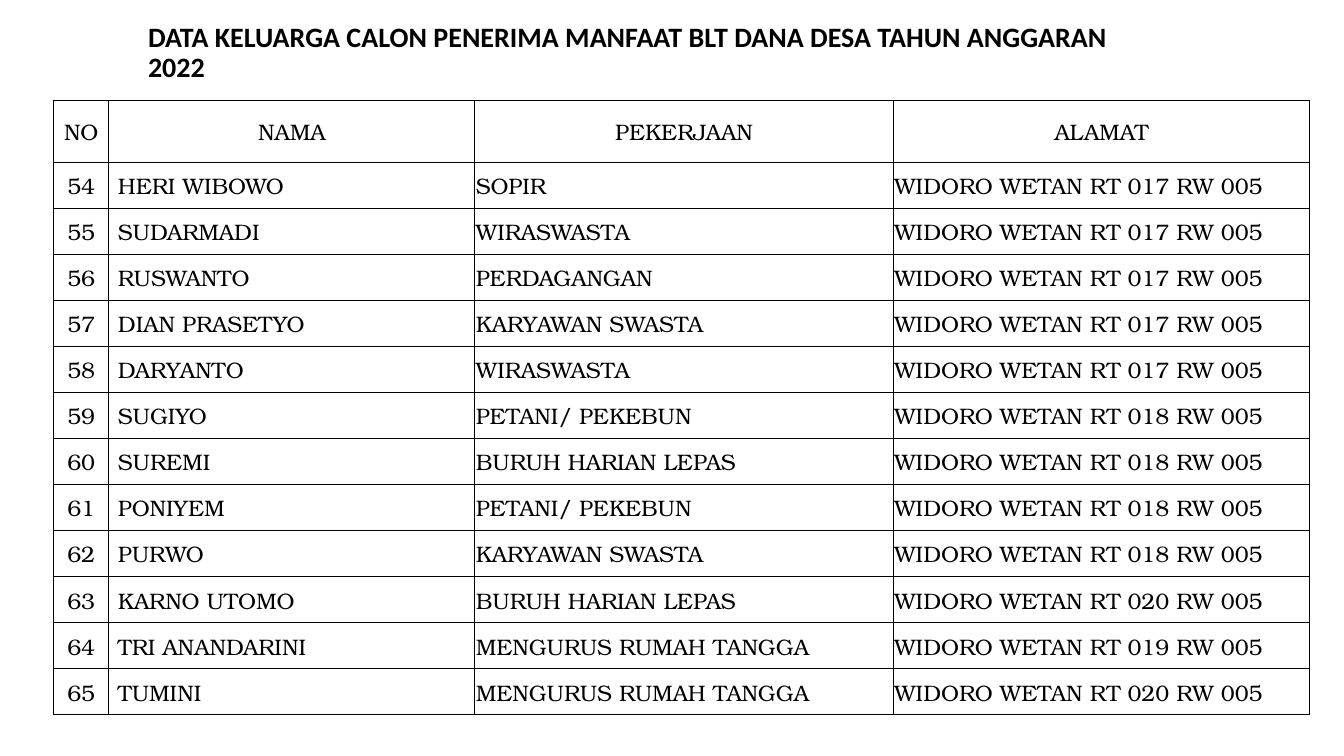
from lxml.etree import SubElement
from pptx import Presentation
from pptx.dml.color import RGBColor
from pptx.enum.text import MSO_ANCHOR, PP_ALIGN
from pptx.oxml.ns import qn
from pptx.util import Inches, Pt

BLACK = RGBColor(0x00, 0x00, 0x00)
WHITE = RGBColor(0xFF, 0xFF, 0xFF)

TITLE = "DATA KELUARGA CALON PENERIMA MANFAAT BLT DANA DESA TAHUN ANGGARAN 2022"
HEADS = ("NO", "NAMA", "PEKERJAAN", "ALAMAT")
WIDTHS = (0.55, 3.63, 4.15, 4.13)
HEAD_H, ROW_H = 0.61, 0.457
FIRST_NO = 54
NAME_COL = 1

# Name, job and RT number of each family
FAMILIES = (
    ("HERI WIBOWO", "SOPIR", "017"),
    ("SUDARMADI", "WIRASWASTA", "017"),
    ("RUSWANTO", "PERDAGANGAN", "017"),
    ("DIAN PRASETYO", "KARYAWAN SWASTA", "017"),
    ("DARYANTO", "WIRASWASTA", "017"),
    ("SUGIYO", "PETANI/ PEKEBUN", "018"),
    ("SUREMI", "BURUH HARIAN LEPAS", "018"),
    ("PONIYEM", "PETANI/ PEKEBUN", "018"),
    ("PURWO", "KARYAWAN SWASTA", "018"),
    ("KARNO UTOMO", "BURUH HARIAN LEPAS", "020"),
    ("TRI ANANDARINI", "MENGURUS RUMAH TANGGA", "019"),
    ("TUMINI", "MENGURUS RUMAH TANGGA", "020"),
)


def style(para, face, size, bold=False):
    font = para.font
    font.name, font.size, font.bold = face, Pt(size), bold
    font.color.rgb = BLACK


def add_title(slide):
    box = slide.shapes.add_textbox(Inches(1.37), Inches(0.23), Inches(9.8), Inches(0.6))
    frame = box.text_frame
    frame.word_wrap = True
    frame.vertical_anchor = MSO_ANCHOR.MIDDLE
    para = frame.paragraphs[0]
    para.text = TITLE
    para.line_spacing = 0.9
    style(para, "Calibri", 20, bold=True)


def add_borders(cell):
    props = cell._tc.get_or_add_tcPr()
    for side in ("lnL", "lnR", "lnT", "lnB"):
        line = SubElement(props, qn(f"a:{side}"), w=str(Pt(1)))
        fill = SubElement(line, qn("a:solidFill"))
        SubElement(fill, qn("a:srgbClr"), val=str(BLACK))


def fill_cell(cell, text, align, indent):
    add_borders(cell)
    cell.fill.solid()
    cell.fill.fore_color.rgb = WHITE
    cell.vertical_anchor = MSO_ANCHOR.MIDDLE
    cell.margin_left = Inches(indent)
    cell.margin_right = cell.margin_top = Inches(0.01)
    cell.margin_bottom = 0
    para = cell.text_frame.paragraphs[0]
    para.text = text
    para.alignment = align
    style(para, "TeX Gyre Bonum", 16)


def add_families(slide):
    rows = [HEADS]
    for num, (name, job, rt) in enumerate(FAMILIES, FIRST_NO):
        rows.append((str(num), name, job, f"WIDORO WETAN RT {rt} RW 005"))
    height = HEAD_H + ROW_H * len(FAMILIES)
    frame = slide.shapes.add_table(len(rows), len(HEADS), Inches(0.53), Inches(1),
                                   Inches(sum(WIDTHS)), Inches(height))
    table = frame.table
    for col, width in zip(table.columns, WIDTHS):
        col.width = Inches(width)
    for r, texts in enumerate(rows):
        table.rows[r].height = Inches(ROW_H if r else HEAD_H)
        for c, text in enumerate(texts):
            center = r == 0 or c == 0
            align = PP_ALIGN.CENTER if center else PP_ALIGN.LEFT
            indent = 0.09 if r and c == NAME_COL else 0.01
            fill_cell(table.cell(r, c), text, align, indent)


def main():
    deck = Presentation()
    deck.slide_width, deck.slide_height = Inches(13.33), Inches(7.5)
    slide = deck.slides.add_slide(deck.slide_layouts[6])
    add_title(slide)
    add_families(slide)
    deck.save("out.pptx")


if __name__ == "__main__":
    main()
